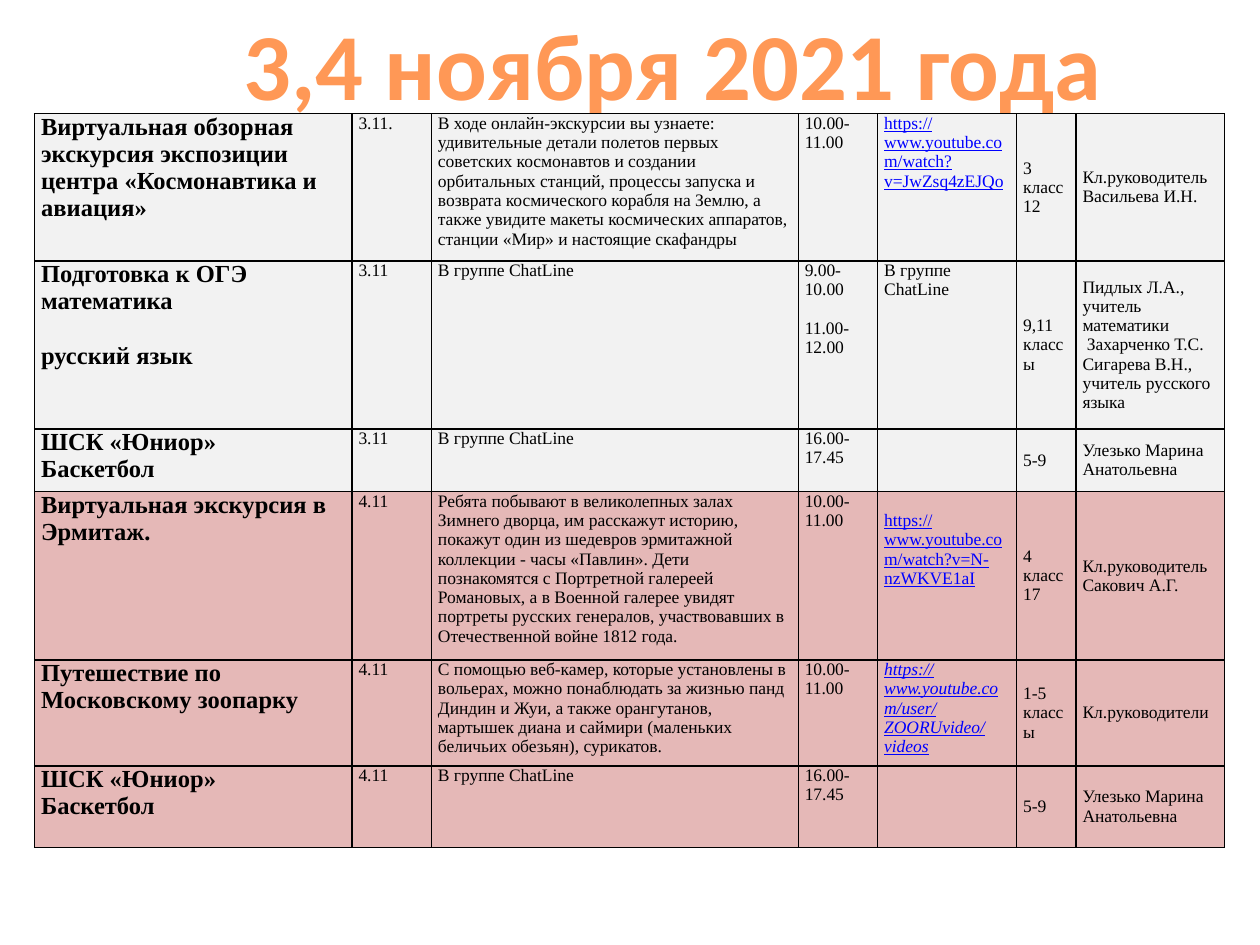
import pptx
import pptx.util
import pptx.dml.color
import pptx.enum.text
import pptx.oxml
import pptx.oxml.ns
from dataclasses import dataclass

Pt = pptx.util.Pt
ANCHOR = pptx.enum.text.MSO_ANCHOR


@dataclass(frozen=True)
class Theme:
    title_font: str = "Calibri"
    body_font: str = "Times New Roman"
    title_size: float = 54
    event_size: float = 14
    body_size: float = 10
    title: str = "FF9856"
    text: str = "000000"
    link: str = "0000FF"
    border: str = "000000"
    day_one: str = "F2F2F2"
    day_two: str = "E5B8B7"


def rgb(value):
    return pptx.dml.color.RGBColor.from_string(value)


class SlideBuilder:
    def __init__(self, prs, theme):
        self.theme = theme
        self.s = prs.slides.add_slide(prs.slide_layouts[5])

    def font(self, p, name, size, color, bold=False):
        for r in p.runs:
            r.font.name = name
            r.font.size = Pt(size)
            r.font.bold = bold
            r.font.color.rgb = rgb(color)

    def title(self, text, left, top, width, height):
        sp = self.s.shapes.title
        sp.left, sp.top, sp.width, sp.height = Pt(left), Pt(top), Pt(width), Pt(height)
        tf = sp.text_frame
        tf.text = text
        tf.word_wrap = False
        tf.auto_size = pptx.enum.text.MSO_AUTO_SIZE.NONE
        tf.vertical_anchor = ANCHOR.TOP
        p = tf.paragraphs[0]
        p.alignment = pptx.enum.text.PP_ALIGN.CENTER
        self.font(p, self.theme.title_font, self.theme.title_size, self.theme.title, True)

    def borders(self, cell):
        tcPr = cell._tc.get_or_add_tcPr()
        for side in ("lnL", "lnR", "lnT", "lnB"):
            tcPr.append(pptx.oxml.parse_xml(
                f'<a:{side} {pptx.oxml.ns.nsdecls("a")} w="12700"><a:solidFill>'
                f'<a:srgbClr val="{self.theme.border}"/></a:solidFill></a:{side}>'))

    def cell(self, cell, text, fill, is_event, middle):
        th = self.theme
        self.borders(cell)
        cell.fill.solid()
        cell.fill.fore_color.rgb = rgb(fill)
        cell.margin_left = cell.margin_right = Pt(3.7)
        cell.margin_top = cell.margin_bottom = 0
        cell.vertical_anchor = ANCHOR.MIDDLE if middle else ANCHOR.TOP
        cell.text_frame.text = text
        for p in cell.text_frame.paragraphs:
            is_link = p.text.startswith("https://")
            self.font(p, th.body_font, th.event_size if is_event else th.body_size,
                      th.link if is_link else th.text, is_event)
            for r in p.runs:
                r.font.underline = is_link

    def table(self, rows, fills, left, top, widths, heights):
        table = self.s.shapes.add_table(
            len(rows), len(widths), Pt(left), Pt(top),
            Pt(sum(widths)), Pt(sum(heights))).table
        table.first_row = table.horz_banding = False
        for column, width in zip(table.columns, widths):
            column.width = Pt(width)
        for i, (row, fill, height) in enumerate(zip(rows, fills, heights)):
            table.rows[i].height = Pt(height)
            for j, text in enumerate(row):
                self.cell(table.cell(i, j), text, fill, j == 0, j >= 5)
        return table


# Event, date, description, time, link, class, teacher
ROWS = [
    ("Виртуальная обзорная экскурсия экспозиции центра «Космонавтика и авиация»", "3.11.",
     "В ходе онлайн-экскурсии вы узнаете: удивительные детали полетов первых советских "
     "космонавтов и создании орбитальных станций, процессы запуска и возврата космического "
     "корабля на Землю, а также увидите макеты космических аппаратов, станции «Мир» и "
     "настоящие скафандры",
     "10.00-11.00", "https://www.youtube.com/watch?v=JwZsq4zEJQo",
     "3 класс\n12", "Кл.руководитель Васильева И.Н."),
    ("Подготовка к ОГЭ математика\nрусский язык", "3.11", "В группе ChatLine",
     "9.00-10.00\n11.00-12.00", "В группе ChatLine", "9,11 классы",
     "Пидлых Л.А., учитель математики\nЗахарченко Т.С.\n"
     "Сигарева В.Н., учитель русского языка"),
    ("ШСК «Юниор»\nБаскетбол", "3.11", "В группе ChatLine", "16.00-17.45", "",
     "5-9", "Улезько Марина Анатольевна"),
    ("Виртуальная экскурсия в Эрмитаж.", "4.11",
     "Ребята побывают в великолепных залах Зимнего дворца, им расскажут историю, покажут "
     "один из шедевров эрмитажной коллекции - часы «Павлин». Дети познакомятся с Портретной "
     "галереей Романовых, а в Военной галерее увидят портреты русских генералов, "
     "участвовавших в Отечественной войне 1812 года.",
     "10.00-11.00", "https://www.youtube.com/watch?v=N-nzWKVE1aI",
     "4 класс\n17", "Кл.руководитель Сакович А.Г."),
    ("Путешествие по Московскому зоопарку", "4.11",
     "С помощью веб-камер, которые установлены в вольерах, можно понаблюдать за жизнью панд "
     "Диндин и Жуи, а также орангутанов, мартышек диана и саймири (маленьких беличьих "
     "обезьян), сурикатов.",
     "10.00-11.00", "https://www.youtube.com/user/ZOORUvideo/videos",
     "1-5 классы", "Кл.руководители"),
    ("ШСК «Юниор»\nБаскетбол", "4.11", "В группе ChatLine", "16.00-17.45", "",
     "5-9", "Улезько Марина Анатольевна"),
]


def main():
    prs = pptx.Presentation()
    prs.slide_width, prs.slide_height = Pt(720), Pt(540)
    theme = Theme()
    page = SlideBuilder(prs, theme)

    # Heading
    page.title("3,4 ноября 2021 года", 130.3, 0, 508.3, 72.7)

    # Schedule, three events a day
    table = page.table(
        ROWS, [theme.day_one] * 3 + [theme.day_two] * 3, 19.8, 65,
        widths=[181.4, 45.4, 209.6, 45.4, 79.4, 34, 84.9],
        heights=[84.2, 96, 35.8, 96.2, 60.6, 46.6])

    # Spacing inside single cells
    for row in (0, 3):
        table.cell(row, 0).margin_bottom = Pt(15.5)
    table.cell(3, 4).margin_top = Pt(11)
    table.cell(1, 0).text_frame.paragraphs[1].space_before = Pt(15.5)
    table.cell(1, 3).text_frame.paragraphs[1].space_before = Pt(11)
    p = table.cell(1, 6).text_frame.paragraphs[1]
    p._p.get_or_add_pPr().set("indent", str(Pt(2.5)))

    # Zoo link in italics
    table.cell(4, 4).text_frame.paragraphs[0].runs[0].font.italic = True

    prs.save("out.pptx")


if __name__ == "__main__":
    main()
